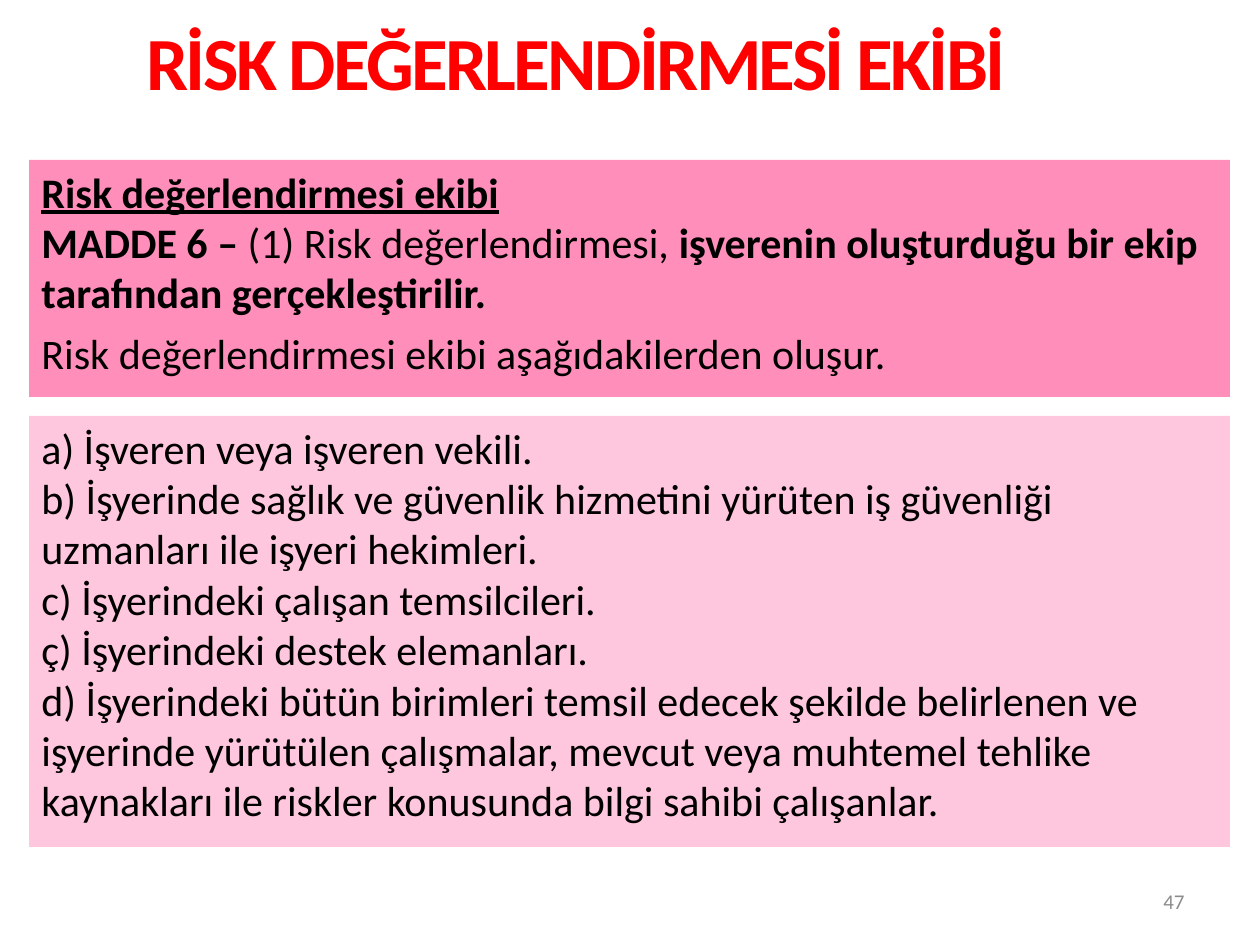
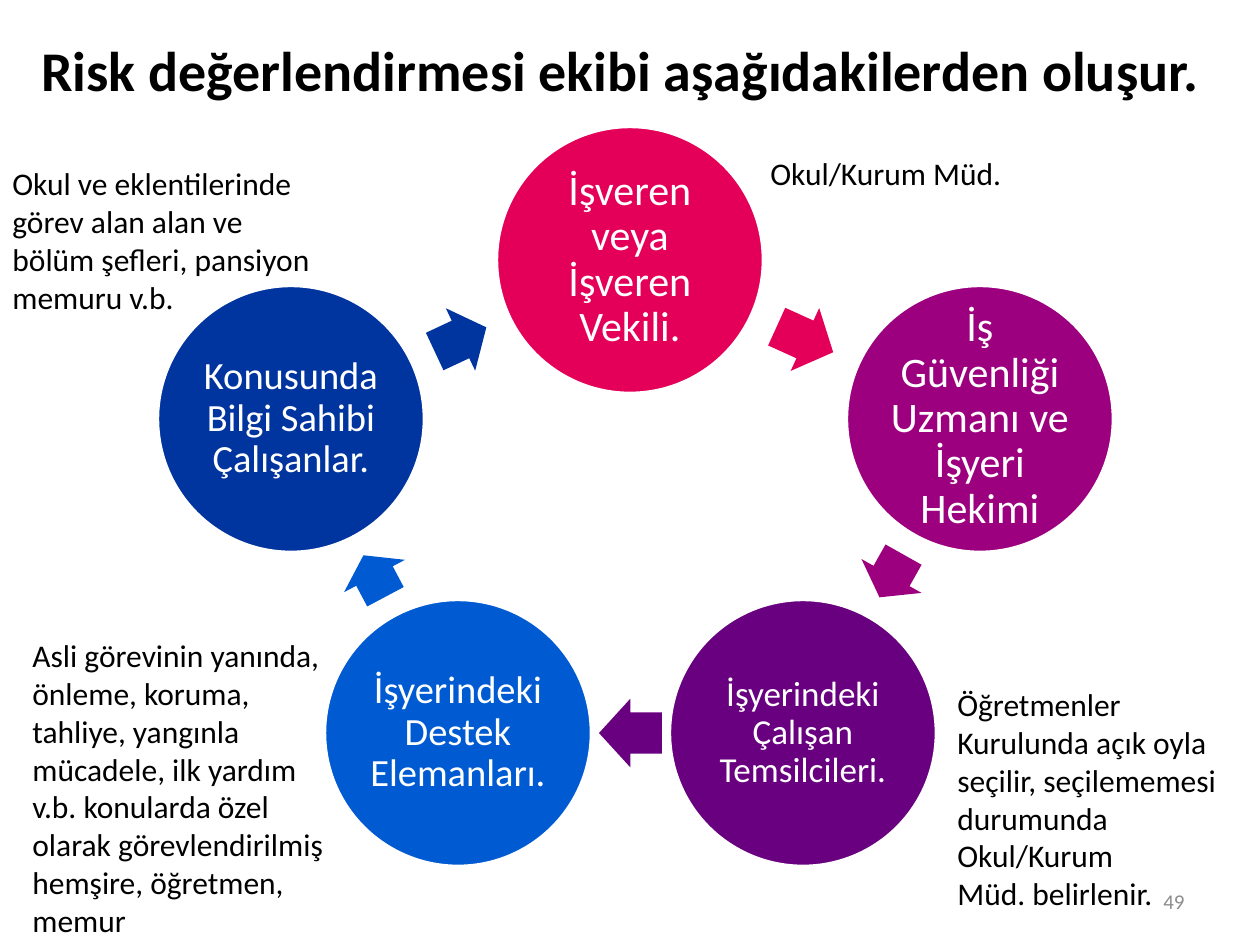
"""Builds two slides on the members of a workplace risk assessment team."""
from dataclasses import dataclass
from math import atan2, degrees

from pptx import Presentation
from pptx.dml.color import RGBColor
from pptx.enum.shapes import MSO_SHAPE as Shape
from pptx.enum.text import MSO_ANCHOR as Anchor, PP_ALIGN as Align
from pptx.util import Emu, Pt


@dataclass(frozen=True)
class Theme:
    font: str = "Calibri"
    text: str = "000000"
    light: str = "FFFFFF"
    title: str = "FF0000"
    number: str = "8C8C8C"
    article: str = "FF8EBA"
    members: str = "FFC7DD"
    title_size: float = 42.9
    heading_size: int = 32
    body_size: int = 24
    note_size: int = 18
    number_size: int = 12


theme = Theme()
PX = 914400 / 126


def add_block(slide, box, kind=None, fill=None):
    """Add a text box, or a filled preset shape, at a box in px."""
    lengths = [Emu(round(value * PX)) for value in box]
    if kind is None:
        return slide.shapes.add_textbox(*lengths)
    shape = slide.shapes.add_shape(kind, *lengths)
    shape.shadow.inherit = False
    shape.fill.solid()
    shape.fill.fore_color.rgb = RGBColor.from_string(fill)
    shape.line.fill.background()
    return shape


def write(shape, paragraphs, size, color=theme.text, bold=False, align=Align.LEFT, anchor=Anchor.TOP):
    """Fill a shape with paragraphs, each a string or a list of (text, bold) runs."""
    frame = shape.text_frame
    frame.word_wrap = True
    frame.vertical_anchor = anchor
    for index, content in enumerate(paragraphs):
        paragraph = frame.add_paragraph() if index else frame.paragraphs[0]
        paragraph.alignment = align
        for text, is_bold in [(content, bold)] if isinstance(content, str) else content:
            run = paragraph.add_run()
            run.text = text
            run.font.name = theme.font
            run.font.size = Pt(size)
            run.font.bold = is_bold
            run.font.color.rgb = RGBColor.from_string(color)
    return frame.paragraphs


presentation = Presentation()
presentation.slide_width = Emu(round(1260 * PX))
presentation.slide_height = Emu(round(945 * PX))
slides = []
for number in ("47", "49"):
    slide = presentation.slides.add_slide(presentation.slide_layouts[6])
    write(add_block(slide, (903, 876, 294, 50)), [number], theme.number_size,
          theme.number, align=Align.RIGHT, anchor=Anchor.MIDDLE)
    slides.append(slide)
article_slide, cycle_slide = slides

title = write(add_block(article_slide, (134, -4, 1063, 129)), ["RİSK DEĞERLENDİRMESİ EKİBİ"],
              theme.title_size, theme.title, bold=True, anchor=Anchor.MIDDLE)
title[0].runs[0].font._element.set("spc", "-150")

article = write(add_block(article_slide, (29, 160, 1201, 237), Shape.RECTANGLE, theme.article), [
    [("Risk değerlendirmesi ekibi", True)],
    [("MADDE 6 – ", True), ("(1) Risk değerlendirmesi, ", False),
     ("işverenin oluşturduğu bir ekip tarafından gerçekleştirilir.", True)],
    "Risk değerlendirmesi ekibi aşağıdakilerden oluşur.",
], theme.body_size)
article[0].runs[0].font.underline = True
article[-1].space_before = Pt(6)

write(add_block(article_slide, (29, 416, 1201, 431), Shape.RECTANGLE, theme.members), [
    "a) İşveren veya işveren vekili.",
    "b) İşyerinde sağlık ve güvenlik hizmetini yürüten iş güvenliği uzmanları ile işyeri hekimleri.",
    "c) İşyerindeki çalışan temsilcileri.",
    "ç) İşyerindeki destek elemanları.",
    "d) İşyerindeki bütün birimleri temsil edecek şekilde belirlenen ve işyerinde yürütülen "
    "çalışmalar, mevcut veya muhtemel tehlike kaynakları ile riskler konusunda bilgi sahibi çalışanlar.",
], theme.body_size)

write(add_block(cycle_slide, (29, 29, 1211, 81)),
      ["Risk değerlendirmesi ekibi aşağıdakilerden oluşur."], theme.heading_size, bold=True)

DIAMETER, ARROW_HEIGHT, INSET = 267, 69, 4
members = [
    ("İşveren veya İşveren Vekili.", 630, 260, "E40059", 24, 62),
    ("İş Güvenliği Uzmanı ve İşyeri Hekimi", 980, 419, "9C007F", 24, 49),
    ("İşyerindeki Çalışan Temsilcileri.", 803, 733, "68007F", 20, 63),
    ("İşyerindeki Destek Elemanları.", 458, 733, "005BD3", 22, 47),
    ("Konusunda Bilgi Sahibi Çalışanlar.", 291, 419, "00349E", 22, 57),
]
for index, (label, x, y, color, size, arrow_width) in enumerate(members):
    circle = add_block(cycle_slide, (x - DIAMETER / 2, y - DIAMETER / 2, DIAMETER, DIAMETER),
                       Shape.OVAL, color)
    circle.line.color.rgb = RGBColor.from_string(theme.light)
    circle.line.width = Pt(2)
    for side in ("left", "top", "right", "bottom"):
        setattr(circle.text_frame, f"margin_{side}", Emu(round(INSET * PX)))
    caption = write(circle, [label], size, theme.light, align=Align.CENTER, anchor=Anchor.MIDDLE)
    caption[0].line_spacing = 0.9

    next_x, next_y = members[(index + 1) % len(members)][1:3]
    arrow = add_block(cycle_slide, ((x + next_x - arrow_width) / 2, (y + next_y - ARROW_HEIGHT) / 2,
                                    arrow_width, ARROW_HEIGHT), Shape.RIGHT_ARROW, color)
    arrow.adjustments[0] = 0.6
    arrow.adjustments[1] = 0.5
    arrow.rotation = degrees(atan2(next_y - y, next_x - x)) % 360

notes = [
    ((945, 679, 315, 242), ["Öğretmenler Kurulunda açık oyla seçilir, seçilememesi durumunda Okul/Kurum",
                            "Müd. belirlenir."]),
    ((758, 148, 315, 50), ["Okul/Kurum Müd."]),
    ((20, 630, 335, 317), ["Asli görevinin yanında, önleme, koruma, tahliye, yangınla mücadele, ilk yardım "
                           "v.b. konularda özel olarak görevlendirilmiş hemşire, öğretmen, memur"]),
    ((0, 158, 344, 165), ["Okul ve eklentilerinde görev alan alan ve bölüm şefleri, pansiyon memuru v.b."]),
]
for box, paragraphs in notes:
    write(add_block(cycle_slide, box), paragraphs, theme.note_size)

presentation.save("out.pptx")
